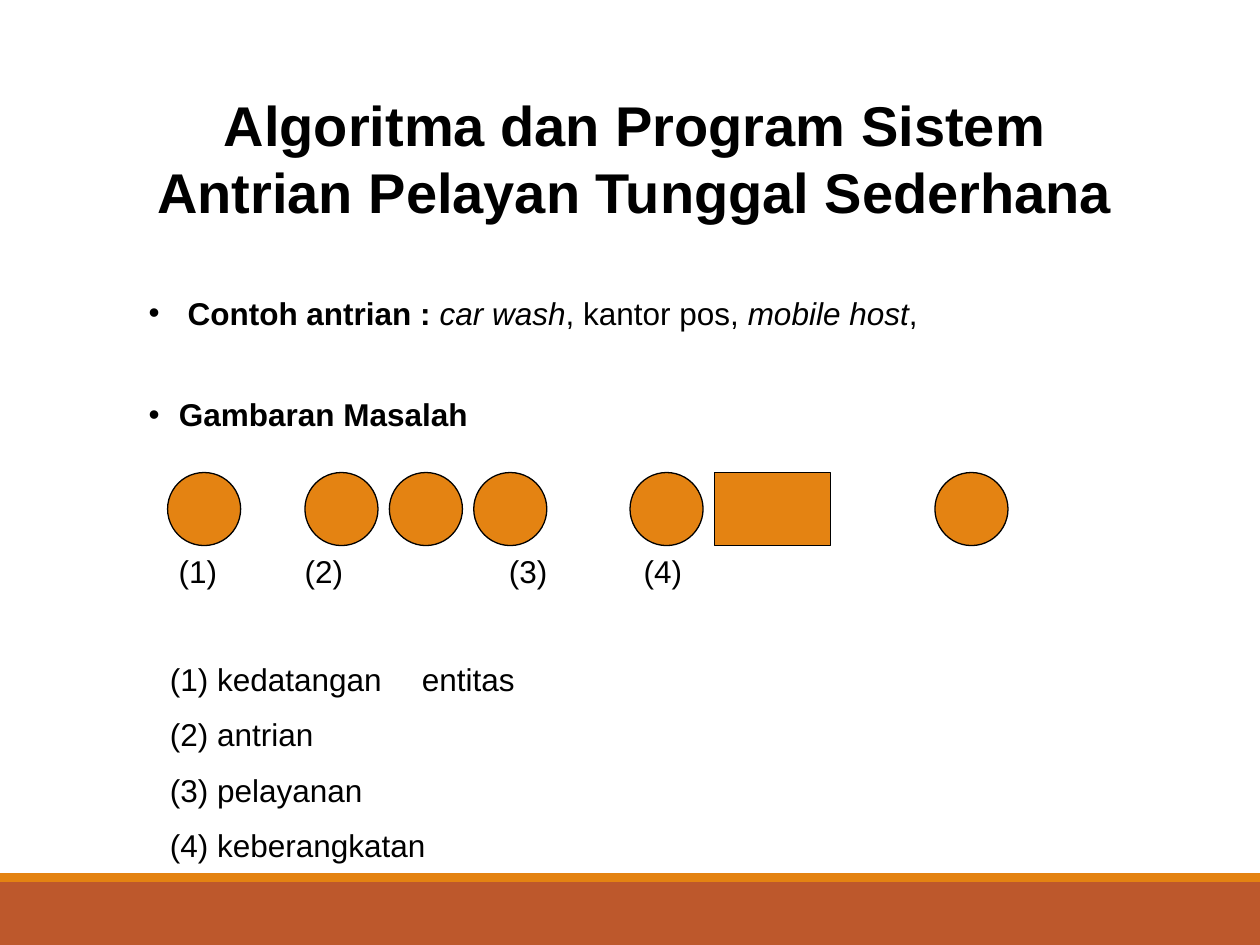
from typing import NamedTuple

from lxml.etree import SubElement
from pptx import Presentation
from pptx.dml.color import RGBColor
from pptx.enum.shapes import MSO_SHAPE as Shape
from pptx.enum.text import MSO_ANCHOR as Anchor, MSO_AUTO_SIZE as Fit, PP_ALIGN as Align
from pptx.oxml.ns import qn
from pptx.util import Inches, Pt

COLORS = {"ink": "000000", "orange": "E48312", "rust": "BD582C"}
FONT = "Arial"


class Box(NamedTuple):
    left: float
    top: float
    width: float
    height: float


class Run(NamedTuple):
    text: str
    bold: bool = False
    italic: bool = False


class Label(NamedTuple):
    text: str
    left: float


TITLE = "Algoritma dan Program Sistem Antrian Pelayan Tunggal Sederhana"
POINTS = [
    [Run(" Contoh antrian : ", bold=True), Run("car wash", italic=True),
     Run(", kantor pos, "), Run("mobile host", italic=True), Run(",")],
    [Run("Gambaran Masalah", bold=True)],
]
LEGEND = [
    [Run("(1) kedatangan\tentitas")],
    [Run("(2) antrian")],
    [Run("(3) pelayanan")],
    [Run("(4) keberangkatan")],
]
LABELS = [Label("(1)", 1.42), Label("(2)", 2.42), Label("(3)", 4.04), Label("(4)", 5.11)]

ROW_TOP, SIZE, STEP = 3.75, 0.58, 0.67
QUEUE = [2.42 + STEP * i for i in range(3)]
CIRCLES = [1.33, *QUEUE, 5, 7.42]
SERVER = Box(5.67, ROW_TOP, 0.92, SIZE)


def color(name: str) -> RGBColor:
    return RGBColor.from_string(COLORS[name])


def place(shape, box: Box) -> None:
    shape.left, shape.top, shape.width, shape.height = map(Inches, box)


def add_shape(slide, kind, box: Box, fill: str, line: str | None = None) -> None:
    shape = slide.shapes.add_shape(kind, *map(Inches, box))
    shape.shadow.inherit = False
    shape.fill.solid()
    shape.fill.fore_color.rgb = color(fill)
    if line:
        shape.line.color.rgb = color(line)
        shape.line.width = Pt(0.75)
    else:
        shape.line.fill.background()


def set_bullet(par, indent: float) -> None:
    props = par._p.get_or_add_pPr()
    props.set("marL", str(Inches(indent)))
    props.set("indent", str(-Inches(indent)))
    SubElement(props, qn("a:buChar")).set("char", "•")


def write(shape, pars: list[list[Run]], size=18, align=Align.LEFT, gap=0,
          bullet=False, wrap=True) -> None:
    """Fill a shape with paragraphs of runs, gap points apart."""
    frame = shape.text_frame
    frame.word_wrap = wrap
    frame.auto_size = Fit.NONE
    frame.vertical_anchor = Anchor.TOP
    for i, runs in enumerate(pars):
        par = frame.add_paragraph() if i else frame.paragraphs[0]
        par.alignment = align
        par.space_before = Pt(0)
        par.space_after = Pt(gap)
        if bullet:
            set_bullet(par, 0.24)
        for item in runs:
            run = par.add_run()
            run.text = item.text
            font = run.font
            font.name, font.size = FONT, Pt(size)
            font.bold, font.italic = item.bold, item.italic
            font.color.rgb = color("ink")


def add_text(slide, box: Box, pars: list[list[Run]], **form) -> None:
    write(slide.shapes.add_textbox(*map(Inches, box)), pars, **form)


def main() -> None:
    deck = Presentation()
    deck.slide_width, deck.slide_height = Inches(10), Inches(7.5)
    slide = deck.slides.add_slide(deck.slide_layouts[1])

    add_shape(slide, Shape.RECTANGLE, Box(0, 7, 10, 0.5), "rust")
    add_shape(slide, Shape.RECTANGLE, Box(0, 6.93, 10, 0.07), "orange")

    title, body = slide.shapes.title, slide.placeholders[1]
    place(title, Box(1.08, 0.67, 7.92, 1.2))
    write(title, [[Run(TITLE, bold=True)]], size=32, align=Align.CENTER)
    place(body, Box(1.08, 2.28, 7.92, 1.29))
    write(body, POINTS, gap=36.5, bullet=True)

    for left in CIRCLES:
        add_shape(slide, Shape.OVAL, Box(left, ROW_TOP, SIZE, SIZE), "orange", "ink")
    add_shape(slide, Shape.RECTANGLE, SERVER, "orange", "ink")

    for label in LABELS:
        box = Box(label.left - 0.1, ROW_TOP + SIZE, 0.6, 0.39)
        add_text(slide, box, [[Run(label.text)]], wrap=False)
    add_text(slide, Box(1.25, 5.19, 7.17, 1.8), LEGEND, gap=10)

    deck.save("out.pptx")


if __name__ == "__main__":
    main()
